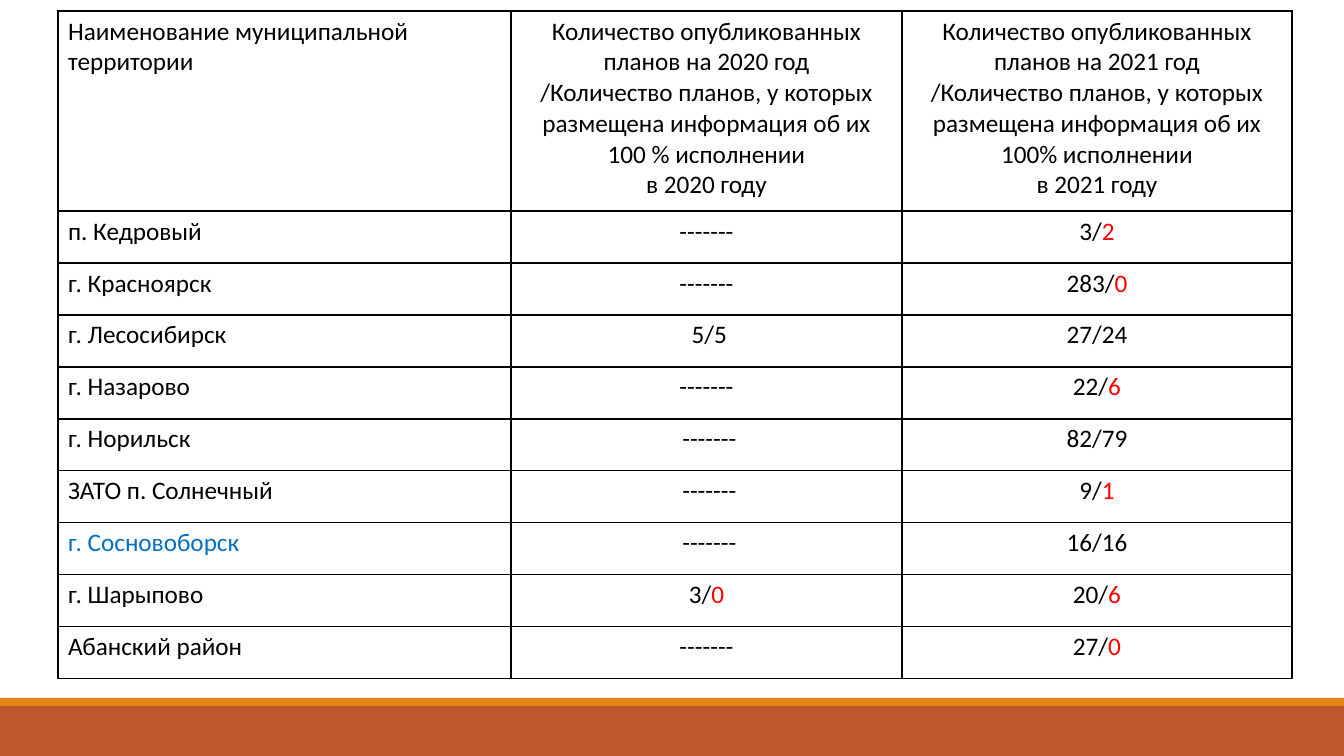
from dataclasses import dataclass

from lxml.etree import SubElement
from pptx import Presentation
from pptx.dml.color import RGBColor
from pptx.enum.shapes import MSO_SHAPE
from pptx.enum.text import PP_ALIGN
from pptx.oxml.ns import qn
from pptx.slide import Slide
from pptx.table import Table, _Cell
from pptx.util import Emu, Pt

SLIDE_WIDTH, SLIDE_HEIGHT = 1344, 756
EMU_PER_PX = 12192000 / SLIDE_WIDTH


@dataclass(frozen=True)
class Theme:
    font: str = "Calibri"
    text_size: int = 18
    border_width: int = 1
    text: str = "000000"
    shortfall: str = "FF0000"
    highlight: str = "0070C0"
    cell: str = "FFFFFF"
    footer: str = "BD582C"
    footer_edge: str = "E48312"


THEME = Theme()


@dataclass(frozen=True)
class Bar:
    top: int
    height: int
    color: str


@dataclass(frozen=True)
class Segment:
    text: str
    color: str = THEME.text


@dataclass(frozen=True)
class Territory:
    name: Segment
    plans_2020: list[Segment]
    plans_2021: list[Segment]


def shortfall(published: int, completed: int) -> list[Segment]:
    """Published / completed counts with the completed count marked."""
    return [Segment(f"{published}/"), Segment(str(completed), THEME.shortfall)]


BARS = [Bar(706, 50, THEME.footer), Bar(698, 8, THEME.footer_edge)]

TABLE_LEFT, TABLE_TOP = 58, 11
COLUMN_WIDTHS = [453, 391, 390]
HEADER_HEIGHT, ROW_HEIGHT = 200, 52

HEADERS = [
    ["Наименование муниципальной территории"],
    [
        "Количество опубликованных планов на 2020 год",
        "/Количество планов, у которых размещена информация об их 100 % исполнении",
        "в 2020 году",
    ],
    [
        "Количество опубликованных планов на 2021 год",
        "/Количество планов, у которых размещена информация об их 100% исполнении",
        "в 2021 году",
    ],
]

NO_PLANS = [Segment("-------")]
NO_PLANS_SPACED = [Segment(" -------")]

TERRITORIES = [
    Territory(Segment("п. Кедровый"), NO_PLANS, shortfall(3, 2)),
    Territory(Segment("г. Красноярск"), NO_PLANS, shortfall(283, 0)),
    Territory(Segment("г. Лесосибирск"), [Segment(" 5/5")], [Segment("27/24")]),
    Territory(Segment("г. Назарово"), NO_PLANS, shortfall(22, 6)),
    Territory(Segment("г. Норильск"), NO_PLANS_SPACED, [Segment("82/79")]),
    Territory(Segment("ЗАТО п. Солнечный"), NO_PLANS_SPACED, shortfall(9, 1)),
    Territory(Segment("г. Сосновоборск", THEME.highlight), NO_PLANS_SPACED, [Segment("16/16")]),
    Territory(Segment("г. Шарыпово"), shortfall(3, 0), shortfall(20, 6)),
    Territory(Segment("Абанский район"), NO_PLANS, shortfall(27, 0)),
]


def px(length: int) -> Emu:
    return Emu(round(length * EMU_PER_PX))


def draw_bar(slide: Slide, bar: Bar) -> None:
    shape = slide.shapes.add_shape(
        MSO_SHAPE.RECTANGLE, px(0), px(bar.top), px(SLIDE_WIDTH), px(bar.height)
    )
    shape.shadow.inherit = False
    shape.fill.solid()
    shape.fill.fore_color.rgb = RGBColor.from_string(bar.color)
    shape.line.fill.background()


def draw_borders(cell: _Cell) -> None:
    properties = cell._tc.get_or_add_tcPr()
    for position, side in enumerate(("lnL", "lnR", "lnT", "lnB")):
        line = SubElement(properties, qn(f"a:{side}"), w=str(Pt(THEME.border_width)))
        fill = SubElement(line, qn("a:solidFill"))
        SubElement(fill, qn("a:srgbClr"), val=THEME.text)
        properties.insert(position, line)


def fill_cell(cell: _Cell, paragraphs: list[list[Segment]], alignment: PP_ALIGN) -> None:
    cell.fill.solid()
    cell.fill.fore_color.rgb = RGBColor.from_string(THEME.cell)
    draw_borders(cell)
    text_frame = cell.text_frame
    text_frame.text = "\n".join(segments[0].text for segments in paragraphs)
    for paragraph, segments in zip(text_frame.paragraphs, paragraphs):
        paragraph.alignment = alignment
        for segment in segments[1:]:
            paragraph.add_run().text = segment.text
        for run, segment in zip(paragraph.runs, segments):
            run.font.name = THEME.font
            run.font.size = Pt(THEME.text_size)
            run.font.color.rgb = RGBColor.from_string(segment.color)


def add_plans_table(slide: Slide) -> Table:
    row_heights = [HEADER_HEIGHT] + [ROW_HEIGHT] * len(TERRITORIES)
    table = slide.shapes.add_table(
        len(row_heights), len(COLUMN_WIDTHS), px(TABLE_LEFT), px(TABLE_TOP),
        px(sum(COLUMN_WIDTHS)), px(sum(row_heights)),
    ).table
    table.first_row = False
    table.horz_banding = False
    for column, width in zip(table.columns, COLUMN_WIDTHS):
        column.width = px(width)
    for row, height in zip(table.rows, row_heights):
        row.height = px(height)
    return table


def draw_plans_table(slide: Slide) -> None:
    table = add_plans_table(slide)
    rows = [[[[Segment(text)] for text in header] for header in HEADERS]]
    rows += [
        [[[territory.name]], [territory.plans_2020], [territory.plans_2021]]
        for territory in TERRITORIES
    ]
    alignments = [PP_ALIGN.LEFT, PP_ALIGN.CENTER, PP_ALIGN.CENTER]
    for table_row, contents in zip(table.rows, rows):
        for cell, paragraphs, alignment in zip(table_row.cells, contents, alignments):
            fill_cell(cell, paragraphs, alignment)


def main() -> None:
    presentation = Presentation()
    presentation.slide_width = px(SLIDE_WIDTH)
    presentation.slide_height = px(SLIDE_HEIGHT)
    slide = presentation.slides.add_slide(presentation.slide_layouts[6])
    for bar in BARS:
        draw_bar(slide, bar)
    draw_plans_table(slide)
    presentation.save("out.pptx")


if __name__ == "__main__":
    main()
